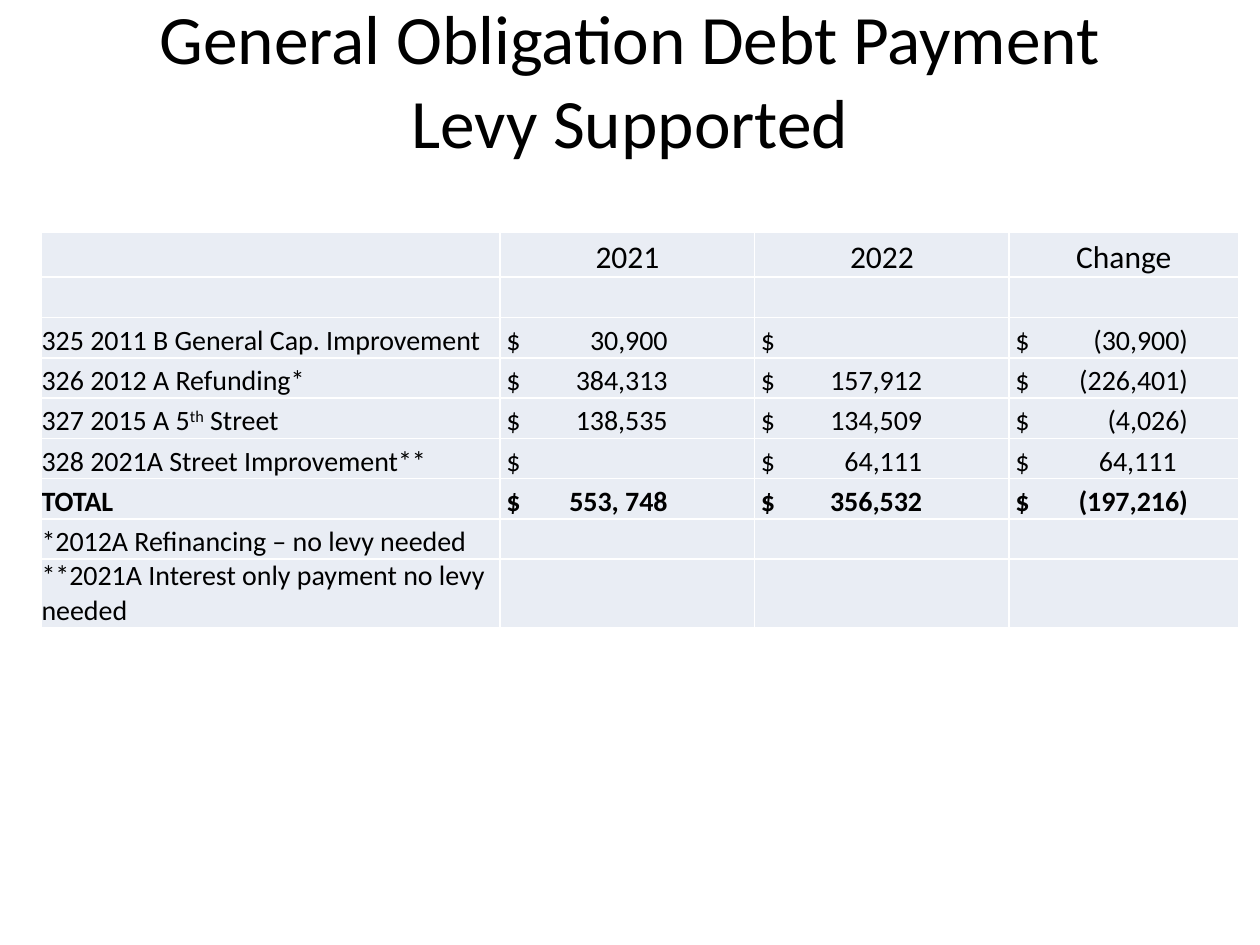
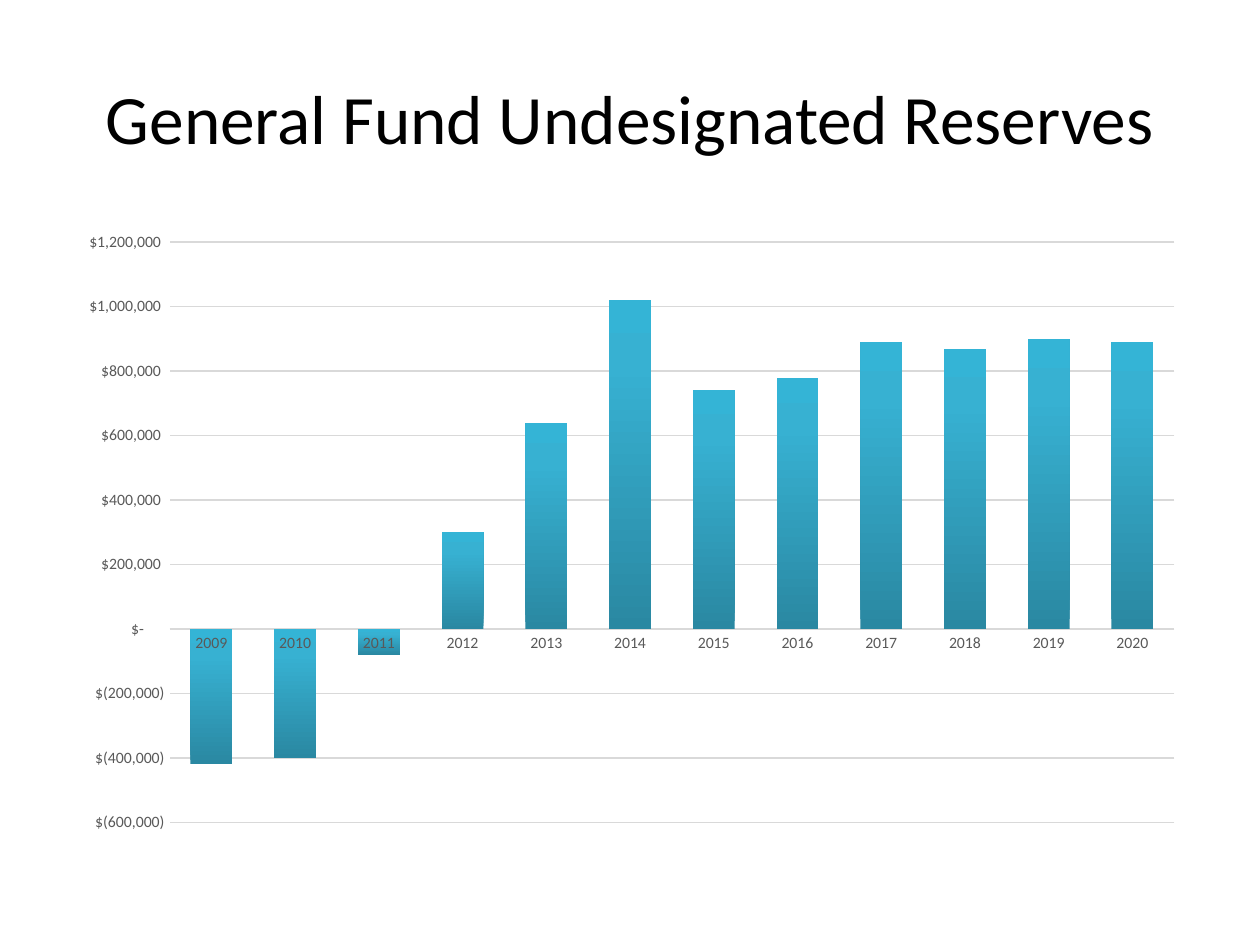
from copy import deepcopy
from dataclasses import dataclass

from lxml.etree import SubElement
from pptx import Presentation
from pptx.chart.data import CategoryChartData
from pptx.dml.color import RGBColor as RGB
from pptx.enum.chart import XL_CHART_TYPE as ChartType, XL_TICK_MARK as TickMark
from pptx.enum.text import (MSO_ANCHOR as Anchor, MSO_AUTO_SIZE as AutoSize,
                            PP_ALIGN as Align)
from pptx.oxml.ns import qn
from pptx.util import Inches, Pt


@dataclass(frozen=True)
class Theme:
    font: str = "Calibri"
    text: RGB = RGB.from_string("000000")
    axis_text: RGB = RGB.from_string("595959")
    grid: RGB = RGB.from_string("D9D9D9")
    cell: RGB = RGB.from_string("E9EDF4")
    bar_stops: tuple = ((0, "2A88A2"), (0.8, "37B1D2"), (1, "34B4D6"))
    title_size: float = 39.6
    header_size: float = 18
    cell_size: float = 16
    chart_size: float = 10
    axis_size: float = 9


THEME = Theme()
TITLE_ONLY = 5

DEBT_COLUMNS = (3.64, 2.02, 2.02, 1.82)
DEBT_ROW_HEIGHTS = [0.36] + [0.32] * 7 + [0.54]
DEBT_HEADER = ("", "2021", "2022", "Change")
DEBT_ROWS = (
    (),
    ("325 2011 B General Cap. Improvement", "30,900", "", "(30,900)"),
    ("326 2012 A Refunding*", "384,313", "157,912", "(226,401)"),
    ("327 2015 A 5^th^ Street", "138,535", "134,509", "(4,026)"),
    ("328 2021A Street Improvement**", "", "64,111", "64,111"),
    ("TOTAL", "553, 748", "356,532", "(197,216)"),
    ("*2012A Refinancing – no levy needed",),
    ("**2021A Interest only payment no levy needed",),
)
DOLLAR_INSET = 0.05
AMOUNT_TAB = 1.28
NEGATIVE_TAB = 1.37

RESERVES = {
    "2009": -420000, "2010": -400000, "2011": -80000, "2012": 300000,
    "2013": 640000, "2014": 1020000, "2015": 740000, "2016": 780000,
    "2017": 890000, "2018": 870000, "2019": 900000, "2020": 890000,
}
ACCOUNTING = r'_("$"* #,##0_);_("$"* \(#,##0\);_("$"* "-"??_);_(@_)'


def apply(target, values):
    for name, value in values.items():
        setattr(target, name, value)


def style_font(font, size, color=THEME.text, bold=False):
    apply(font, {"name": THEME.font, "size": Pt(size), "bold": bold})
    font.color.rgb = color


def add_titled_slide(deck, title, top):
    slide = deck.slides.add_slide(deck.slide_layouts[TITLE_ONLY])
    box = slide.shapes.title
    apply(box, {"left": Inches(0.5), "top": Inches(top),
                "width": Inches(9), "height": Inches(1.25)})
    frame = box.text_frame
    apply(frame, {"text": title, "word_wrap": True, "auto_size": AutoSize.NONE,
                  "vertical_anchor": Anchor.MIDDLE})
    para = frame.paragraphs[0]
    para.alignment = Align.CENTER
    for span in para.runs:
        style_font(span.font, THEME.title_size)
    return slide


def format_cell(cell):
    cell.fill.solid()
    cell.fill.fore_color.rgb = THEME.cell
    apply(cell, {"margin_left": 0, "margin_right": 0, "margin_top": 0,
                 "margin_bottom": 0, "vertical_anchor": Anchor.BOTTOM})


def write_label(cell, text, size, bold=False):
    """Write text in which ^marks^ enclose a superscript."""
    para = cell.text_frame.paragraphs[0]
    for index, part in enumerate(text.split("^")):
        span = para.add_run()
        span.text = part
        style_font(span.font, size, bold=bold)
        if index % 2:
            span.font._element.set("baseline", "30000")
    return para


def write_amount(cell, amount, bold):
    """Write a dollar sign at the left and the amount at a right tab."""
    cell.margin_left = Inches(DOLLAR_INSET)
    para = write_label(cell, f"$\t{amount}" if amount else "$",
                       THEME.cell_size, bold)
    if amount:
        position = NEGATIVE_TAB if amount.startswith("(") else AMOUNT_TAB
        tabs = SubElement(para._p.get_or_add_pPr(), qn("a:tabLst"))
        SubElement(tabs, qn("a:tab"), pos=str(Inches(position)), algn="r")


def add_debt_table(slide):
    table = slide.shapes.add_table(
        len(DEBT_ROW_HEIGHTS), len(DEBT_COLUMNS), Inches(0.33), Inches(1.84),
        Inches(sum(DEBT_COLUMNS)), Inches(sum(DEBT_ROW_HEIGHTS))).table
    apply(table, {"first_row": False, "horz_banding": False})
    for column, width in zip(table.columns, DEBT_COLUMNS):
        column.width = Inches(width)
    for row, height in zip(table.rows, DEBT_ROW_HEIGHTS):
        row.height = Inches(height)
    for cell in table.iter_cells():
        format_cell(cell)
    for column, heading in enumerate(DEBT_HEADER):
        if heading:
            para = write_label(table.cell(0, column), heading, THEME.header_size)
            para.alignment = Align.CENTER
    for row, values in enumerate(DEBT_ROWS, start=1):
        for column, value in enumerate(values):
            cell, bold = table.cell(row, column), values[0] == "TOTAL"
            if column:
                write_amount(cell, value, bold)
            else:
                write_label(cell, value, THEME.cell_size, bold)


def fill_bars(series):
    fill = series.format.fill
    fill.gradient()
    stop_list = series._element.xpath(".//a:gsLst")[0]
    stop_list.append(deepcopy(stop_list[-1]))
    for stop, (position, color) in zip(fill.gradient_stops, THEME.bar_stops):
        stop.position = position
        stop.color.rgb = RGB.from_string(color)
    fill.gradient_angle = 90


def style_axis(axis):
    apply(axis, {"major_tick_mark": TickMark.NONE,
                 "minor_tick_mark": TickMark.NONE})
    style_font(axis.tick_labels.font, THEME.axis_size, THEME.axis_text)


def style_line(line, width):
    line.width = Pt(width)
    line.color.rgb = THEME.grid


def add_reserves_chart(slide):
    data = CategoryChartData()
    data.categories = list(RESERVES)
    data.add_series("Series 1", list(RESERVES.values()))
    chart = slide.shapes.add_chart(
        ChartType.COLUMN_CLUSTERED, Inches(0.5), Inches(1.75),
        Inches(9), Inches(4.95), data).chart
    apply(chart, {"has_legend": False, "has_title": False})
    style_font(chart.font, THEME.chart_size)

    plot = chart.plots[0]
    apply(plot, {"gap_width": 100, "overlap": -24, "vary_by_categories": False})
    plot.series[0].invert_if_negative = False
    fill_bars(plot.series[0])

    years, dollars = chart.category_axis, chart.value_axis
    style_axis(years)
    style_line(years.format.line, 1)
    style_axis(dollars)
    dollars.format.line.fill.background()
    apply(dollars, {"minimum_scale": -600000, "maximum_scale": 1200000,
                    "major_unit": 200000, "has_major_gridlines": True})
    style_line(dollars.major_gridlines.format.line, 0.75)
    apply(dollars.tick_labels, {"number_format": ACCOUNTING,
                                "number_format_is_linked": False})


def main():
    deck = Presentation()
    apply(deck, {"slide_width": Inches(10), "slide_height": Inches(7.5)})
    add_debt_table(add_titled_slide(
        deck, "General Obligation Debt Payment\vLevy Supported", top=0))
    add_reserves_chart(add_titled_slide(
        deck, "General Fund Undesignated Reserves", top=0.3))
    deck.save("out.pptx")


if __name__ == "__main__":
    main()
